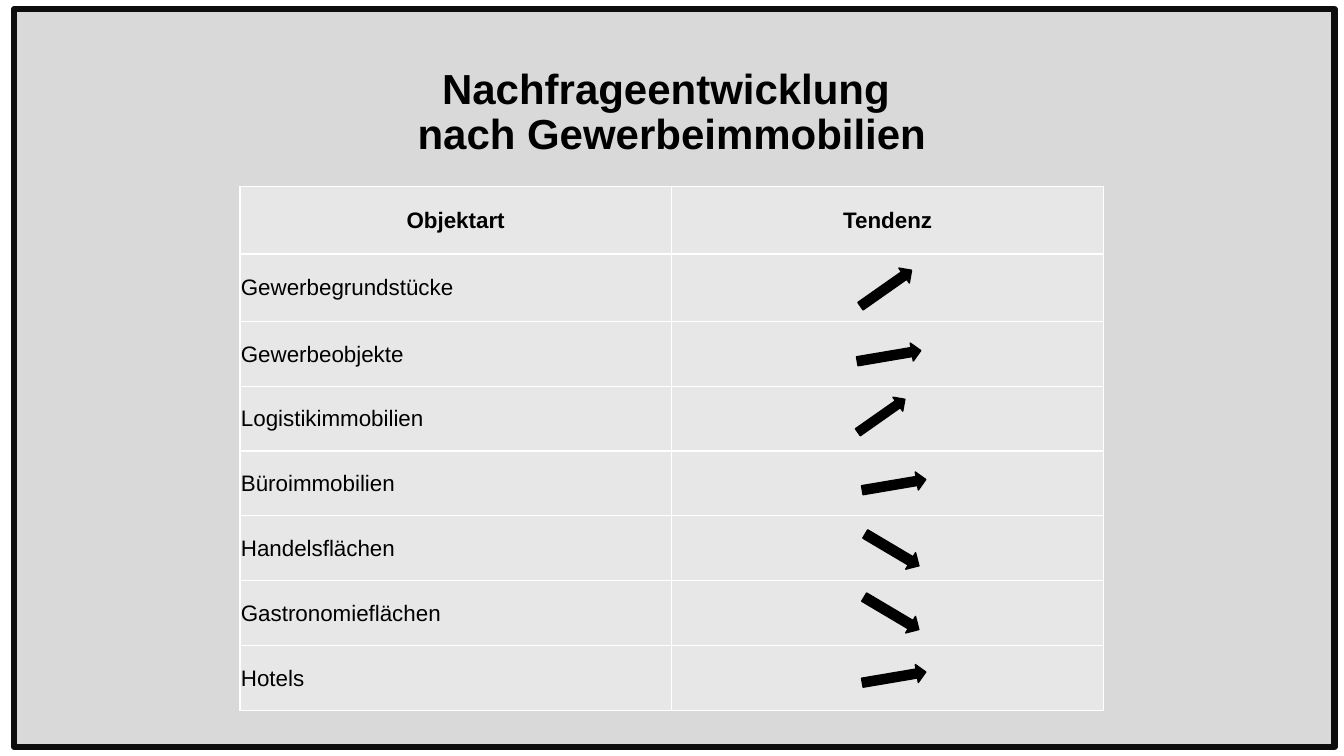
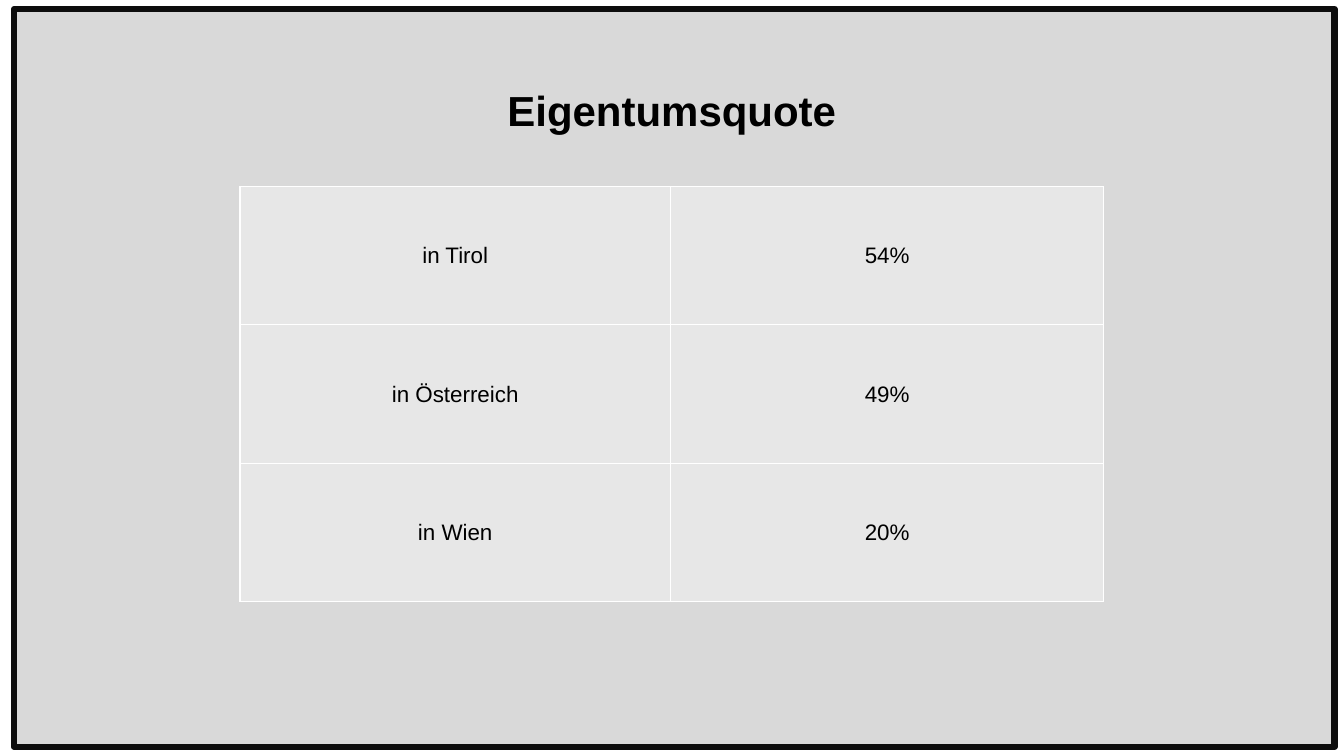
from dataclasses import dataclass

from lxml.etree import SubElement
from pptx import Presentation
from pptx.dml.color import RGBColor
from pptx.enum.shapes import MSO_SHAPE
from pptx.enum.text import MSO_ANCHOR, PP_ALIGN
from pptx.oxml.ns import qn
from pptx.util import Pt


@dataclass(frozen=True)
class Theme:
    font: str = "Arial"
    title_size: int = 30
    body_size: int = 16
    text: str = "000000"
    panel: str = "D9D9D9"
    frame: str = "0D0D0D"
    cell: str = "E7E7E7"
    border: str = "FFFFFF"


THEME = Theme()
TABLE_LEFT, TABLE_TOP = 171.4, 133.2

DEMAND_ROWS = [
    ("Objektart", "Tendenz"),
    ("Gewerbegrundstücke", ""),
    ("Gewerbeobjekte", ""),
    ("Logistikimmobilien", ""),
    ("Büroimmobilien", ""),
    ("Handelsflächen", ""),
    ("Gastronomieflächen", ""),
    ("Hotels", ""),
]
OWNERSHIP_ROWS = [
    ("in Tirol", "54%"),
    ("in Österreich", "49%"),
    ("in Wien", "20%"),
]

# Rotation of each tendency in degrees
RISING, LEVEL, FALLING = 324.9, 350.4, 30.7

# Tendency, centre x, centre y, length, thickness
TENDENCY_ARROWS = [
    (RISING, 632.9, 205.9, 44.6, 13),
    (LEVEL, 635, 254.2, 46, 13),
    (RISING, 629.6, 297, 41, 12.2),
    (LEVEL, 638.6, 346.3, 46, 13),
    (FALLING, 637.2, 392.8, 44.6, 13.7),
    (FALLING, 636.8, 438.1, 45.4, 13.7),
    (LEVEL, 638.6, 483.8, 46, 13),
]


def set_attributes(target, values):
    for name, value in values.items():
        setattr(target, name, value)


def set_fill(fill, color):
    fill.solid()
    fill.fore_color.rgb = RGBColor.from_string(color)


def write_text(text_frame, text, size, bold, alignment, line_spacing=1.0):
    text_frame.text = text
    paragraph = text_frame.paragraphs[0]
    set_attributes(paragraph, {"alignment": alignment, "line_spacing": line_spacing})
    for run in paragraph.runs:
        set_attributes(run.font, {"name": THEME.font, "size": Pt(size), "bold": bold})
        run.font.color.rgb = RGBColor.from_string(THEME.text)


def add_filled_shape(slide, kind, box, fill, line, line_width):
    shape = slide.shapes.add_shape(kind, *map(Pt, box))
    shape.shadow.inherit = False
    set_fill(shape.fill, fill)
    set_fill(shape.line.fill, line)
    shape.line.width = Pt(line_width)
    return shape


def add_titled_slide(presentation, title):
    slide = presentation.slides.add_slide(presentation.slide_layouts[6])
    # Framed background panel
    add_filled_shape(slide, MSO_SHAPE.RECTANGLE, (10.1, 6.5, 943.2, 527),
                     THEME.panel, THEME.frame, 4.5)
    # Title
    text_frame = slide.shapes.add_textbox(*map(Pt, (66, 28.8, 828, 104.4))).text_frame
    set_attributes(text_frame, {"word_wrap": True, "vertical_anchor": MSO_ANCHOR.MIDDLE})
    write_text(text_frame, title, THEME.title_size, True, PP_ALIGN.CENTER, 0.9)
    return slide


def add_borders(cell):
    properties = cell._tc.get_or_add_tcPr()
    for side in ("a:lnL", "a:lnR", "a:lnT", "a:lnB"):
        line = SubElement(properties, qn(side), w=str(Pt(1)))
        fill = SubElement(line, qn("a:solidFill"))
        SubElement(fill, qn("a:srgbClr"), val=THEME.border)


def format_cell(cell, text, bold, alignment):
    add_borders(cell)
    set_fill(cell.fill, THEME.cell)
    set_attributes(cell, {
        "vertical_anchor": MSO_ANCHOR.MIDDLE,
        "margin_left": Pt(0.7), "margin_right": Pt(0.7),
        "margin_top": Pt(0.7), "margin_bottom": Pt(0),
    })
    if text:
        write_text(cell.text_frame, text, THEME.body_size, bold, alignment)


def add_grid(slide, rows, widths, heights, has_header=False):
    """Header rows are bold; the labels below a header are left-aligned."""
    table = slide.shapes.add_table(
        len(rows), len(widths),
        *map(Pt, (TABLE_LEFT, TABLE_TOP, sum(widths), sum(heights)))).table
    set_attributes(table, {"first_row": False, "horz_banding": False})
    for column, width in zip(table.columns, widths):
        column.width = Pt(width)
    for row_index, (row, height) in enumerate(zip(rows, heights)):
        table.rows[row_index].height = Pt(height)
        is_header = has_header and row_index == 0
        is_label = has_header and not is_header
        alignment = PP_ALIGN.LEFT if is_label else PP_ALIGN.CENTER
        for column_index, text in enumerate(row):
            format_cell(table.cell(row_index, column_index), text, is_header, alignment)


def add_tendency_arrow(slide, rotation, center_x, center_y, length, thickness):
    box = (center_x - length / 2, center_y - thickness / 2, length, thickness)
    arrow = add_filled_shape(slide, MSO_SHAPE.RIGHT_ARROW, box, THEME.text, THEME.text, 1)
    arrow.rotation = rotation


def main():
    presentation = Presentation()
    set_attributes(presentation, {"slide_width": Pt(960), "slide_height": Pt(540)})

    # Demand by type of commercial property
    slide = add_titled_slide(presentation, "Nachfrageentwicklung \vnach Gewerbeimmobilien")
    add_grid(slide, DEMAND_ROWS, (308.2, 308.9), [48.2] * 2 + [46.3] * 6, has_header=True)
    for arrow in TENDENCY_ARROWS:
        add_tendency_arrow(slide, *arrow)

    # Ownership rate
    slide = add_titled_slide(presentation, "Eigentumsquote")
    add_grid(slide, OWNERSHIP_ROWS, (307.5, 309.6), [98.9] * 3)

    presentation.save("out.pptx")


if __name__ == "__main__":
    main()
